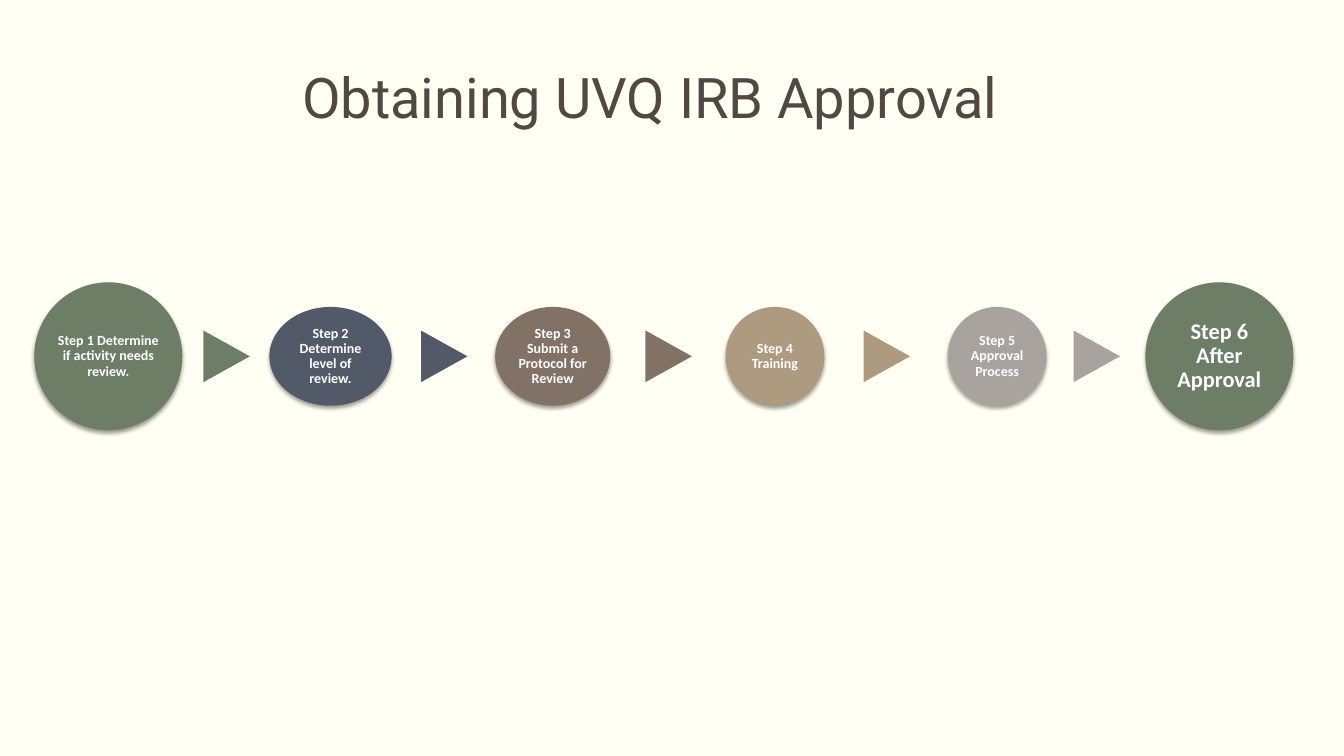
import dataclasses

import lxml.etree
import pptx
import pptx.dml.color
import pptx.enum.shapes
import pptx.enum.text
import pptx.oxml
import pptx.oxml.ns
import pptx.shapes.autoshape
import pptx.shapes.group
import pptx.text.text
import pptx.util

Cm = pptx.util.Cm
Pt = pptx.util.Pt
PRESET = pptx.enum.shapes.MSO_SHAPE

COLOURS = {
    "background": "FFFFF3",
    "title": "514843",
    "label": "FFFFFF",
    "shadow": "000000",
    "green": "6D7D66",
    "slate": "525A6A",
    "brown": "827266",
    "tan": "AE9A7E",
    "grey": "A8A39E",
}

# Lengths in centimetres
FIRST_CENTRE = 2.73
STEP_PITCH = 5.6
FLOW_MIDDLE = 8.98
ARROW_BASE, ARROW_DEPTH = 1.3, 1.17
ARROW_SHIFT = 0.02


@dataclasses.dataclass(frozen=True)
class Step:
    label: str
    colour: str
    width: float
    height: float
    size: int = 10
    inset: float = 0.03


STEPS = [
    Step("Step 1 Determine if activity needs review.", "green", 3.73, 3.73),
    Step("Step 2 Determine level of review.", "slate", 3.08, 2.49),
    Step("Step 3 Submit a Protocol for Review", "brown", 2.9, 2.49),
    Step("Step 4 Training", "tan", 2.49, 2.49),
    Step("Step 5 Approval Process", "grey", 2.49, 2.49),
    Step("Step 6 After Approval", "green", 3.73, 3.73, size=16, inset=0.05),
]


def rgb(name: str) -> pptx.dml.color.RGBColor:
    return pptx.dml.color.RGBColor.from_string(COLOURS[name])


def apply_format(target: object, values: dict[str, object]) -> None:
    for attribute, value in values.items():
        setattr(target, attribute, value)


def write_text(frame: pptx.text.text.TextFrame, text: str, colour: str,
               frame_format: dict[str, object], font_format: dict[str, object]) -> None:
    frame.text = text
    apply_format(frame, {"word_wrap": True,
                         "auto_size": pptx.enum.text.MSO_AUTO_SIZE.NONE, **frame_format})
    paragraph = frame.paragraphs[0]
    apply_format(paragraph, {"alignment": pptx.enum.text.PP_ALIGN.CENTER, "line_spacing": 0.9})
    font = paragraph.runs[0].font
    apply_format(font, font_format)
    font.color.rgb = rgb(colour)


def add_plain_shape(flow: pptx.shapes.group.GroupShape, preset: PRESET, centre: float,
                    width: float, height: float, colour: str) -> pptx.shapes.autoshape.Shape:
    """Add a shape without outline or shadow, centred on the flow's middle line."""
    shape = flow.shapes.add_shape(preset, Cm(centre - width / 2), Cm(FLOW_MIDDLE - height / 2),
                                  Cm(width), Cm(height))
    shape.fill.solid()
    shape.fill.fore_color.rgb = rgb(colour)
    shape.line.fill.background()
    shape.shadow.inherit = False
    return shape


def add_drop_shadow(shape: pptx.shapes.autoshape.Shape) -> None:
    effects = shape.element.spPr.find(pptx.oxml.ns.qn("a:effectLst"))
    effects.append(pptx.oxml.parse_xml(
        f'<a:outerShdw {pptx.oxml.ns.nsdecls("a")} blurRad="{Pt(3.1)}" dist="{Pt(2)}" '
        f'dir="5400000" rotWithShape="0"><a:srgbClr val="{COLOURS["shadow"]}">'
        '<a:alpha val="38000"/></a:srgbClr></a:outerShdw>'))


def add_step(flow: pptx.shapes.group.GroupShape, step: Step, centre: float) -> None:
    circle = add_plain_shape(flow, PRESET.OVAL, centre, step.width, step.height, step.colour)
    add_drop_shadow(circle)
    margins = {f"margin_{side}": Cm(step.inset) for side in ("left", "top", "right", "bottom")}
    write_text(circle.text_frame, step.label, "label",
               {"vertical_anchor": pptx.enum.text.MSO_ANCHOR.MIDDLE, **margins},
               {"name": "Calibri", "size": Pt(step.size), "bold": True})


def add_arrow(flow: pptx.shapes.group.GroupShape, centre: float, colour: str) -> None:
    arrow = add_plain_shape(flow, PRESET.ISOSCELES_TRIANGLE, centre,
                            ARROW_BASE, ARROW_DEPTH, colour)
    arrow.rotation = 90


def main() -> None:
    presentation = pptx.Presentation()
    apply_format(presentation, {"slide_width": Cm(33.87), "slide_height": Cm(19.05)})
    slide = presentation.slides.add_slide(presentation.slide_layouts.get_by_name("Title Only"))
    slide.background.fill.solid()
    slide.background.fill.fore_color.rgb = rgb("background")

    title = slide.shapes.title
    apply_format(title, {"left": Cm(6.07), "top": Cm(1.12),
                         "width": Cm(20.62), "height": Cm(2.29)})
    write_text(title.text_frame, "Obtaining UVQ IRB Approval", "title",
               {"vertical_anchor": pptx.enum.text.MSO_ANCHOR.BOTTOM,
                "margin_left": 0, "margin_right": 0},
               {"name": "Roboto", "size": Pt(40)})

    flow = slide.shapes.add_group_shape()
    centres = [FIRST_CENTRE + STEP_PITCH * index for index in range(len(STEPS))]
    for index, (step, centre) in enumerate(zip(STEPS, centres)):
        add_step(flow, step, centre)
        if index + 1 < len(STEPS):
            gap_start = centre + step.width / 2
            gap_end = centres[index + 1] - STEPS[index + 1].width / 2
            add_arrow(flow, (gap_start + gap_end) / 2 + ARROW_SHIFT, step.colour)

    presentation.save("out.pptx")


if __name__ == "__main__":
    main()
